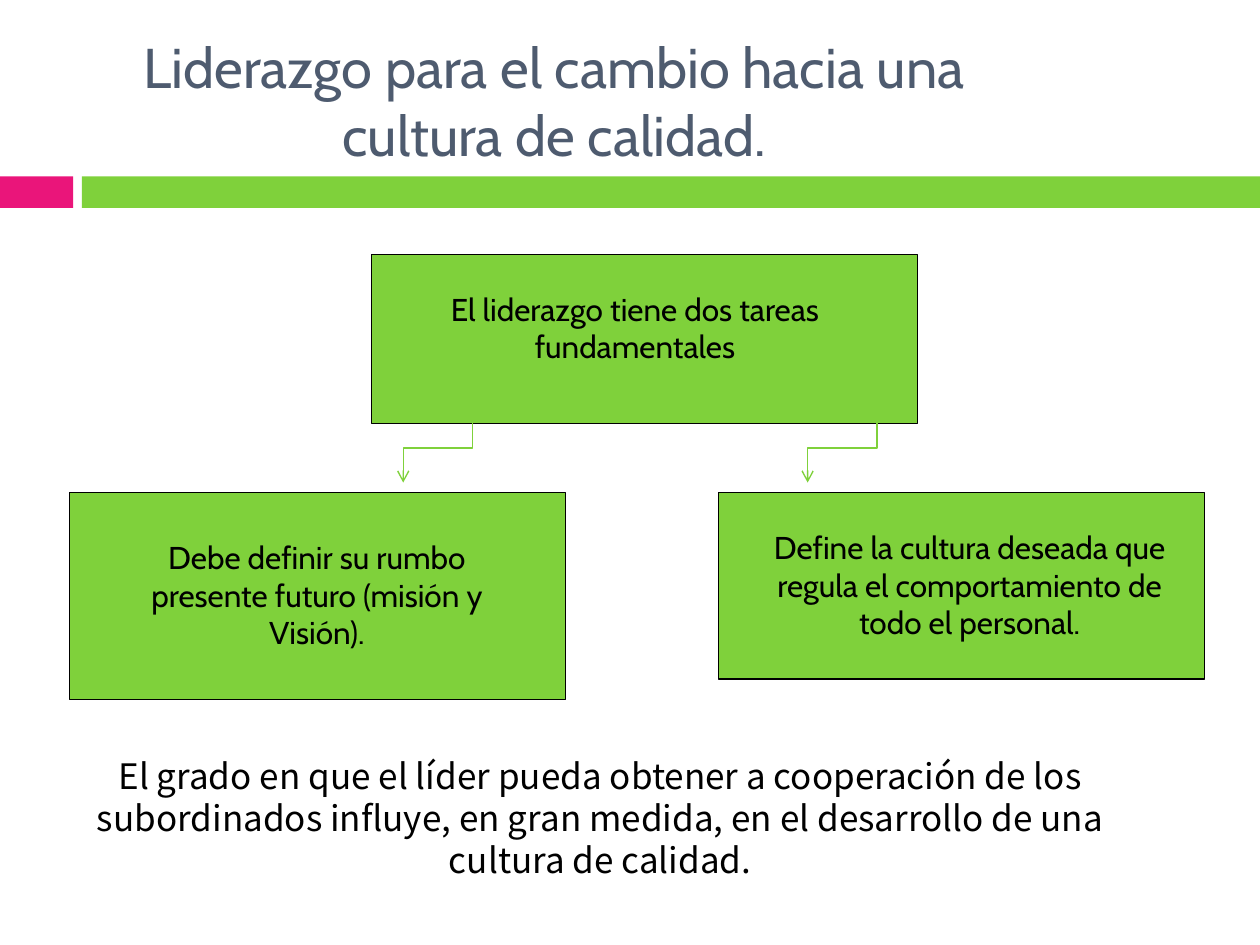
from lxml import etree
from pptx import Presentation
from pptx.dml.color import RGBColor
from pptx.enum.shapes import MSO_CONNECTOR, MSO_SHAPE
from pptx.enum.text import MSO_ANCHOR, PP_ALIGN
from pptx.oxml.ns import qn
from pptx.util import Inches, Pt

RECTANGLE = MSO_SHAPE.RECTANGLE
ELBOW = MSO_CONNECTOR.ELBOW
CENTER = PP_ALIGN.CENTER
TOP, MIDDLE = MSO_ANCHOR.TOP, MSO_ANCHOR.MIDDLE
COLORS = {"pink": "EA157A", "green": "7FD13B", "slate": "4E5B6F", "black": "000000"}

presentation = Presentation()
presentation.slide_width = Inches(10)
presentation.slide_height = Inches(7.5)
slide = presentation.slides.add_slide(presentation.slide_layouts[6])


def add_rectangle(box, fill, line=None):
    shape = slide.shapes.add_shape(RECTANGLE, *map(Inches, box))
    shape.shadow.inherit = False
    shape.fill.solid()
    shape.fill.fore_color.rgb = RGBColor.from_string(COLORS[fill])
    if line:
        shape.line.color.rgb = RGBColor.from_string(COLORS[line])
        shape.line.width = Pt(0.75)
    else:
        shape.line.fill.background()


def add_text(box, text, size, font="Cabin", color="black", anchor=TOP):
    frame = slide.shapes.add_textbox(*map(Inches, box)).text_frame
    frame.word_wrap = True
    frame.vertical_anchor = anchor
    paragraph = frame.paragraphs[0]
    paragraph.text = text
    paragraph.alignment = CENTER
    paragraph.font.size = Pt(size)
    paragraph.font.name = font
    paragraph.font.color.rgb = RGBColor.from_string(COLORS[color])
    return paragraph


# Title and the two-colour band below it
add_rectangle((0, 1.4, 0.58, 0.25), "pink")
add_rectangle((0.65, 1.4, 9.35, 0.25), "green")
add_text((0.55, 0.23, 7.7, 1.13), "Liderazgo para el cambio hacia una cultura de calidad.",
         32, color="slate", anchor=MIDDLE)

# Main idea and its two tasks: box, text area, wording
tasks = [
    ((2.95, 2.02, 4.33, 1.34), (3.11, 2.25, 3.86, 0.7),
     "El liderazgo tiene dos tareas fundamentales"),
    ((0.55, 3.91, 3.94, 1.64), (0.94, 4.22, 3.15, 1),
     "Debe definir su rumbo presente futuro (misión y Visión)."),
    ((5.7, 3.91, 3.86, 1.48), (5.94, 4.14, 3.51, 1.01),
     "Define la cultura deseada que regula el comportamiento de todo el personal."),
]
for box, text_area, text in tasks:
    add_rectangle(box, "green", "black")
    add_text(text_area, text, 18)

# Closing statement
closing = add_text(
    (0.55, 5.94, 8.43, 1.11),
    "El grado en que el líder pueda obtener a cooperación de los subordinados influye, "
    "en gran medida, en el desarrollo de una cultura de calidad.",
    20, font="Noto Sans CJK KR")
closing.line_spacing = Pt(24)

# Elbow arrows, turned a quarter so that they leave downwards
arrow_top, arrow_size = 3.28, 0.55
for left in (3.2, 6.41):
    connector = slide.shapes.add_connector(
        ELBOW, Inches(left), Inches(arrow_top),
        Inches(left + arrow_size), Inches(arrow_top + arrow_size))
    connector.line.color.rgb = RGBColor.from_string(COLORS["green"])
    connector.line.width = Pt(0.79)
    properties = connector._element.spPr
    properties.find(qn("a:xfrm")).set("rot", str(90 * 60000))
    etree.SubElement(properties.find(qn("a:ln")), qn("a:tailEnd"), type="arrow")
    etree.SubElement(properties, qn("a:effectLst"))

presentation.save("out.pptx")
